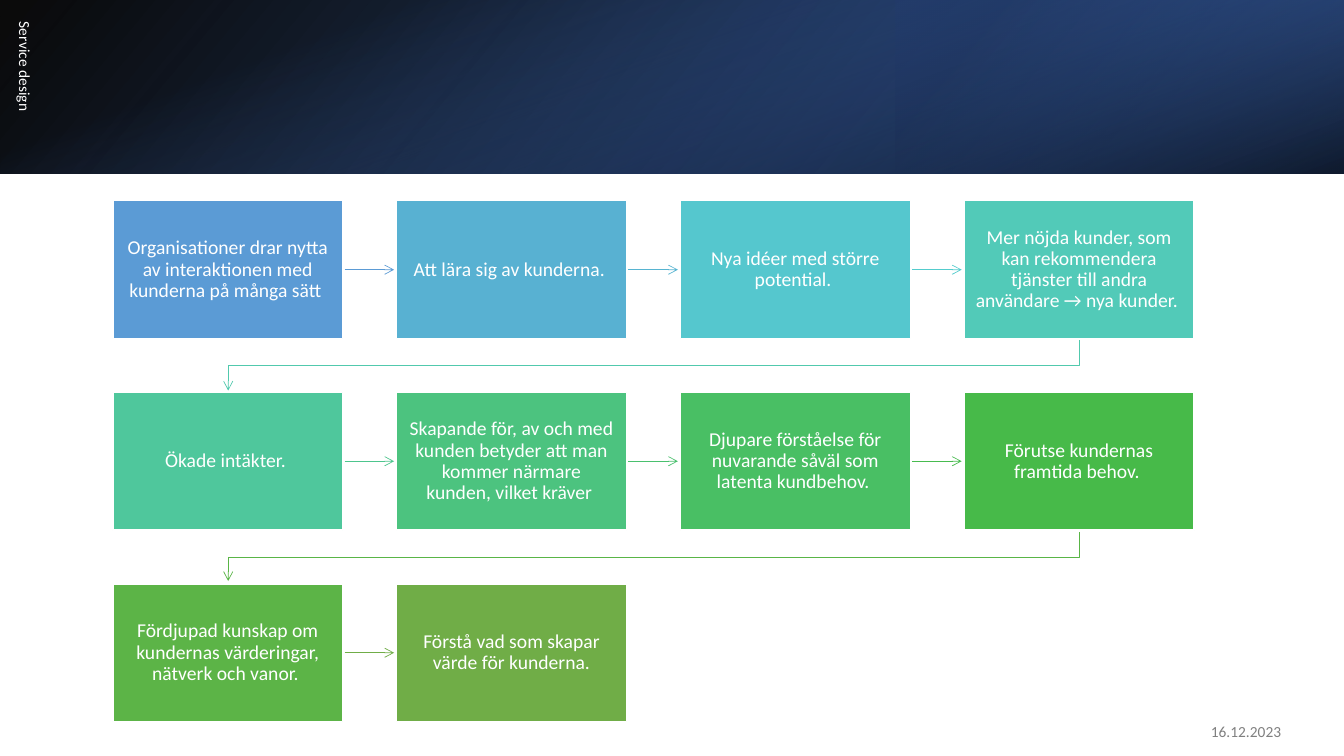
import dataclasses
import typing

import lxml.etree
import pptx
import pptx.dml.color
import pptx.enum.shapes
import pptx.enum.text
import pptx.oxml.ns
import pptx.util

Pt = pptx.util.Pt
RGB = pptx.dml.color.RGBColor
Align = pptx.enum.text.PP_ALIGN
Kind = pptx.enum.shapes.MSO_SHAPE
qn = pptx.oxml.ns.qn

WHITE = RGB(0xFF, 0xFF, 0xFF)
BLACK = RGB(0x00, 0x00, 0x00)
GREY = RGB(0x80, 0x80, 0x80)
BLUE = RGB(0x44, 0x72, 0xC4)
NAVY = RGB(0x20, 0x38, 0x64)
ROYAL = RGB(0x2F, 0x55, 0x97)
FONT = "Calibri"

COLS = 4
LEFT, TOP = 80.6, 143.4
WIDE, HIGH = 164.2, 98.5
STEP_X, STEP_Y = 202.7, 136.8
GAP = 1.4
REACH = 35.3
BAND = 124.1


@dataclasses.dataclass
class Stop:
    place: float
    color: RGB
    alpha: int


@dataclasses.dataclass
class Layer:
    box: tuple[float, float, float, float]
    turn: int
    flip: bool
    angle: int
    stops: tuple[Stop, Stop]


@dataclasses.dataclass
class Step:
    text: str
    fill: RGB
    arrow: typing.Optional[RGB] = None


LAYERS = [
    Layer((0, 0, 960, BAND), 0, True, 140,
          (Stop(0, BLACK, 96), Stop(1, ROYAL, 100))),
    Layer((640, 0, 320, BAND), 180, True, 320,
          (Stop(0.19, NAVY, 68), Stop(1, BLUE, 79))),
    Layer((480 - BAND / 2, BAND / 2 - 480, BAND, 960), 90, False, 340,
          (Stop(0.23, BLUE, 0), Stop(0.99, BLACK, 74))),
]
# A trailing space shifts a centred last line, so it is part of the wording.
STEPS = [
    Step("Organisationer drar nytta av interaktionen med kunderna på många sätt ",
         RGB(0x5B, 0x9B, 0xD5), RGB(0x5B, 0x9B, 0xD5)),
    Step("Att lära sig av kunderna. ",
         RGB(0x58, 0xB1, 0xD2), RGB(0x57, 0xB4, 0xD1)),
    Step("Nya idéer med större potential. ",
         RGB(0x55, 0xC7, 0xCE), RGB(0x54, 0xCC, 0xCD)),
    Step("Mer nöjda kunder, som kan rekommendera tjänster till andra "
         "användare → nya kunder. ",
         RGB(0x52, 0xCA, 0xB8), RGB(0x51, 0xC9, 0xAD)),
    Step("Ökade intäkter. ",
         RGB(0x4F, 0xC7, 0x9C), RGB(0x4D, 0xC5, 0x8D)),
    Step("Skapande för, av och med kunden betyder att man kommer närmare "
         "kunden, vilket kräver ",
         RGB(0x4C, 0xC3, 0x7F), RGB(0x4A, 0xC0, 0x6E)),
    Step("Djupare förståelse för nuvarande såväl som latenta kundbehov. ",
         RGB(0x49, 0xBF, 0x64), RGB(0x48, 0xBB, 0x4F)),
    Step("Förutse kundernas framtida behov. ",
         RGB(0x47, 0xBA, 0x49), RGB(0x59, 0xB5, 0x46)),
    Step("Fördjupad kunskap om kundernas värderingar, nätverk och vanor. ",
         RGB(0x5C, 0xB4, 0x47), RGB(0x70, 0xAD, 0x47)),
    Step("Förstå vad som skapar värde för kunderna.",
         RGB(0x70, 0xAD, 0x47)),
]


def write(shape, text: str, *, size: float, color: RGB, align=Align.LEFT,
          inset: tuple[float, float] = (7.2, 3.6), space: float = 1) -> None:
    frame = shape.text_frame
    frame.word_wrap = True
    frame.vertical_anchor = pptx.enum.text.MSO_ANCHOR.MIDDLE
    frame.margin_left = frame.margin_right = Pt(inset[0])
    frame.margin_top = frame.margin_bottom = Pt(inset[1])
    para = frame.paragraphs[0]
    para.alignment = align
    para.line_spacing = space
    run = para.add_run()
    run.text = text
    run.font.name = FONT
    run.font.size = Pt(size)
    run.font.color.rgb = color


def add_layer(shapes, layer: Layer) -> None:
    """Draw one half-clear gradient of the top band."""
    rect = shapes.add_shape(Kind.RECTANGLE, *map(Pt, layer.box))
    rect.shadow.inherit = False
    rect.line.fill.background()
    rect.rotation = layer.turn
    props = rect.element.spPr
    if layer.flip:
        props.find(qn("a:xfrm")).set("flipH", "1")
    rect.fill.gradient()
    rect.fill.gradient_angle = 360 - layer.angle
    for mark, stop in zip(rect.fill.gradient_stops, layer.stops):
        mark.position = stop.place
        mark.color.rgb = stop.color
    for node, stop in zip(props.iter(qn("a:srgbClr")), layer.stops):
        alpha = lxml.etree.SubElement(node, qn("a:alpha"))
        alpha.set("val", str(stop.alpha * 1000))


def add_label(shapes, text: str, box: tuple[float, float, float, float],
              color: RGB, align, turn: int = 0) -> None:
    label = shapes.add_textbox(*map(Pt, box))
    label.rotation = turn
    write(label, text, size=11, color=color, align=align)


def add_step(shapes, step: Step, x: float, y: float) -> None:
    rect = shapes.add_shape(Kind.RECTANGLE, Pt(x), Pt(y), Pt(WIDE), Pt(HIGH))
    rect.shadow.inherit = False
    rect.fill.solid()
    rect.fill.fore_color.rgb = step.fill
    rect.line.color.rgb = WHITE
    rect.line.width = Pt(1)
    write(rect, step.text, size=14, color=WHITE, align=Align.CENTER,
          inset=(8, 8.5), space=0.9)


def add_arrow(shapes, points: list[tuple[float, float]], color: RGB) -> None:
    """Draw a connector for two points, or an open outline for more."""
    if len(points) == 2:
        ends = [Pt(value) for point in points for value in point]
        arrow = shapes.add_connector(
            pptx.enum.shapes.MSO_CONNECTOR.STRAIGHT, *ends)
    else:
        pen = shapes.build_freeform(*points[0], scale=Pt(1))
        pen.add_line_segments(points[1:], close=False)
        arrow = pen.convert_to_shape()
        arrow.fill.background()
    arrow.line.color.rgb = color
    arrow.line.width = Pt(0.5)
    props = arrow.element.spPr
    tail = lxml.etree.SubElement(props.find(qn("a:ln")), qn("a:tailEnd"))
    tail.set("type", "arrow")
    lxml.etree.SubElement(props, qn("a:effectLst"))


def main() -> None:
    deck = pptx.Presentation()
    deck.slide_width, deck.slide_height = Pt(960), Pt(540)
    shapes = deck.slides.add_slide(deck.slide_layouts[6]).shapes

    for layer in LAYERS:
        add_layer(shapes, layer)
    add_label(shapes, "Service design", (-144, 156.2, 324, 28.8), WHITE,
              Align.LEFT, turn=90)
    add_label(shapes, "16.12.2023", (706.3, 508.3, 216, 28.8), GREY, Align.RIGHT)

    for index, step in enumerate(STEPS):
        row, col = divmod(index, COLS)
        x, y = LEFT + col * STEP_X, TOP + row * STEP_Y
        add_step(shapes, step, x, y)
        if step.arrow is None:
            continue
        if col < COLS - 1:
            start, mid = x + WIDE + GAP, y + HIGH / 2
            points = [(start, mid), (start + REACH, mid)]
        else:
            start, end = x + WIDE / 2, LEFT + WIDE / 2
            base, bend = y + HIGH + GAP, y + (HIGH + STEP_Y) / 2
            points = [(start, base), (start, bend), (end, bend),
                      (end, base + REACH)]
        add_arrow(shapes, points, step.arrow)

    deck.save("out.pptx")


if __name__ == "__main__":
    main()
